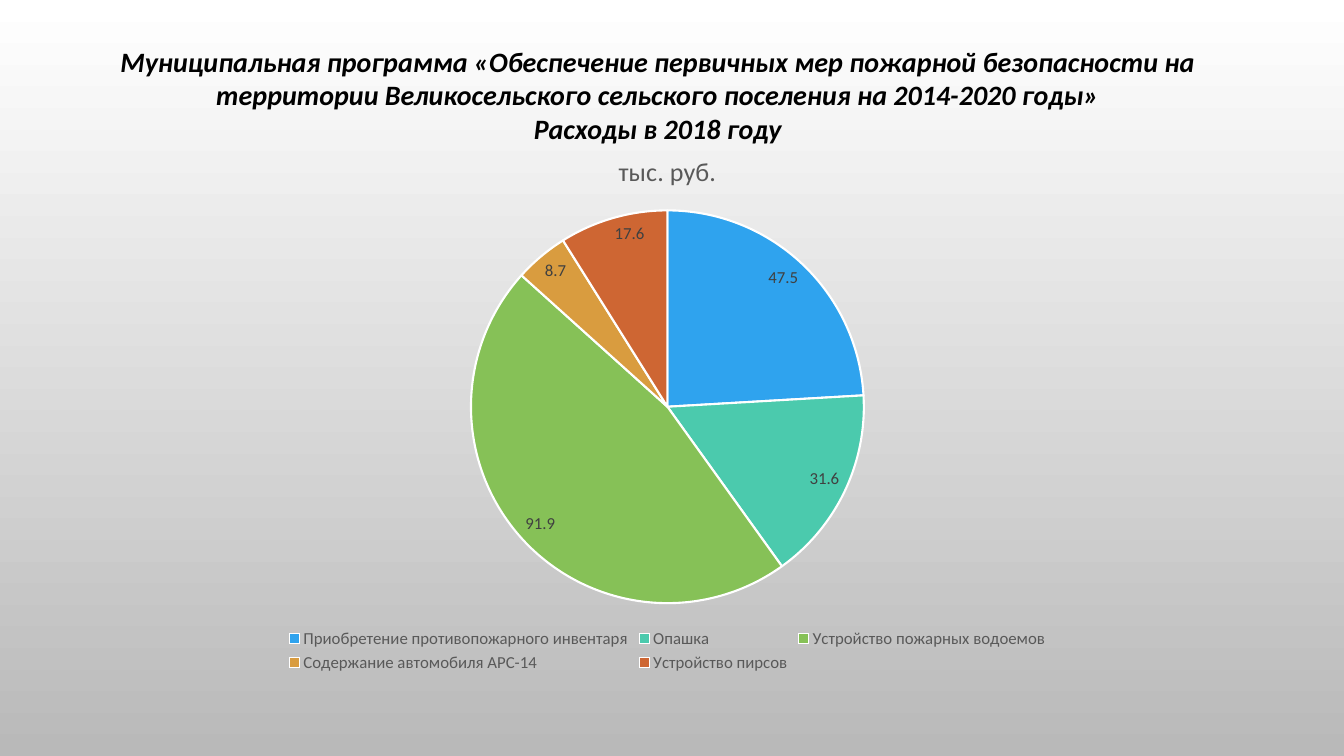
from pptx import Presentation
from pptx.chart.data import CategoryChartData
from pptx.dml.color import RGBColor
from pptx.enum.chart import XL_CHART_TYPE as ChartType
from pptx.enum.chart import XL_LABEL_POSITION as LabelPosition
from pptx.enum.chart import XL_LEGEND_POSITION as LegendPosition
from pptx.enum.text import MSO_ANCHOR, PP_ALIGN
from pptx.util import Pt

PX = 9144  # 100 px per inch
FONT = "Calibri"
UNIT = "тыс. руб."
HEADING = [
    "Муниципальная программа «Обеспечение первичных мер пожарной безопасности "
    "на территории Великосельского сельского поселения на 2014-2020 годы»",
    "Расходы в 2018 году",
]
EXPENSES = [
    ("Приобретение противопожарного инвентаря", 47.5, "2FA3EE"),
    ("Опашка", 31.6, "4BCAAD"),
    ("Устройство пожарных водоемов", 91.9, "86C157"),
    ("Содержание автомобиля АРС-14", 8.7, "D99C3F"),
    ("Устройство пирсов", 17.6, "CE6633"),
]


def rgb(code):
    return RGBColor.from_string(code)


def style(font, size, color, bold=False, italic=False):
    font.name, font.size = FONT, Pt(size)
    font.bold, font.italic = bold, italic
    font.color.rgb = rgb(color)


# Slide with a vertical grey gradient
deck = Presentation()
deck.slide_width, deck.slide_height = 1333 * PX, 750 * PX
slide = deck.slides.add_slide(deck.slide_layouts[5])
backdrop = slide.background.fill
backdrop.gradient()
backdrop.gradient_angle = 270
for stop, color in zip(backdrop.gradient_stops, ("FFFFFF", "B9B9B9")):
    stop.color.rgb = rgb(color)

# Heading
heading = slide.shapes.title
heading.left, heading.top = 39 * PX, 39 * PX
heading.width, heading.height = 1227 * PX, 111 * PX
heading_text = heading.text_frame
heading_text.word_wrap = True
heading_text.vertical_anchor = MSO_ANCHOR.TOP
heading_text.text = "\n".join(HEADING)
for paragraph in heading_text.paragraphs:
    paragraph.alignment = PP_ALIGN.CENTER
    style(paragraph.font, 20, "000000", bold=True, italic=True)

# Expense pie
expense_data = CategoryChartData()
expense_data.categories = [name for name, _, _ in EXPENSES]
expense_data.add_series(UNIT, [amount for _, amount, _ in EXPENSES])
pie = slide.shapes.add_chart(
    ChartType.PIE, 91 * PX, 131 * PX, 1142 * PX, 540 * PX, expense_data
).chart
style(pie.font, 10, "000000")

# Chart title and legend
pie.has_title = True
pie.chart_title.include_in_layout = False
unit_text = pie.chart_title.text_frame
unit_text.text = UNIT
style(unit_text.paragraphs[0].font, 18.6, "595959")
pie.has_legend = True
pie.legend.position = LegendPosition.BOTTOM
pie.legend.include_in_layout = False
style(pie.legend.font, 12, "595959")

# Slices and their values
plot = pie.plots[0]
plot.vary_by_categories = True
for index, (_, _, color) in enumerate(EXPENSES):
    slice_format = plot.series[0].points[index].format
    slice_format.fill.solid()
    slice_format.fill.fore_color.rgb = rgb(color)
    slice_format.line.color.rgb = rgb("FFFFFF")
    slice_format.line.width = Pt(1.5)
labels = plot.series[0].data_labels
labels.show_value = True
labels.position = LabelPosition.INSIDE_END
style(labels.font, 12, "404040")

deck.save("out.pptx")
